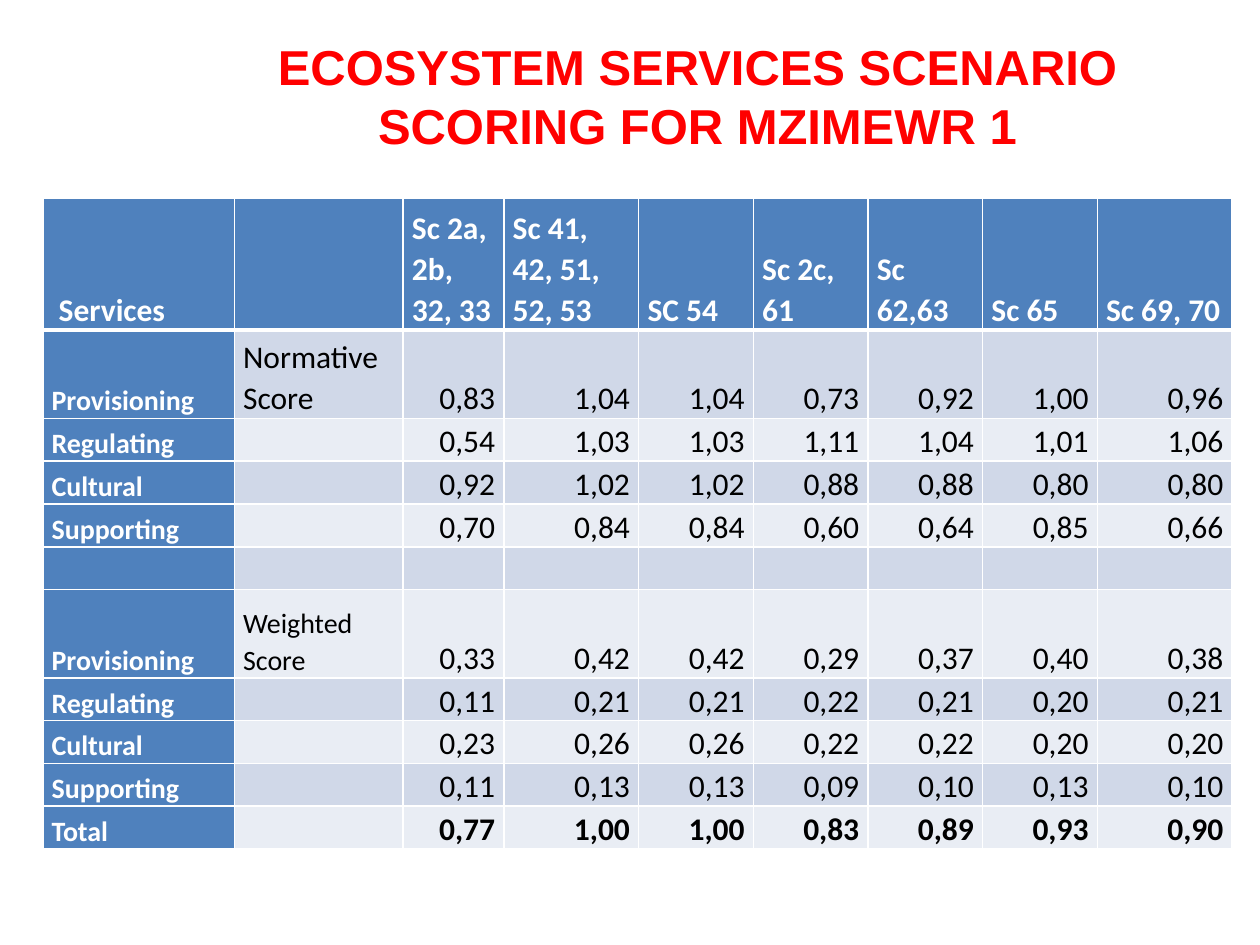
from typing import NamedTuple

from lxml.etree import SubElement as Sub
from pptx import Presentation
from pptx.dml.color import RGBColor as Rgb
from pptx.enum.text import MSO_ANCHOR as Anchor, PP_ALIGN as Align
from pptx.oxml.ns import qn
from pptx.util import Inches, Pt

HUES = {
    "title": "FF0000", "head": "4F81BD", "odd": "D0D8E8",
    "even": "E9EDF4", "light": "FFFFFF", "dark": "000000",
}


class Row(NamedTuple):
    name: str
    note: str = ""
    vals: str = ""
    high: float = 0.34
    note_size: int = 18
    bold: bool = False


HEADS = ["\u00a0Services".replace("\u00a0", " "), "", "Sc 2a, 2b, 32, 33", "Sc 41, 42, 51, 52, 53",
         "SC 54", "Sc 2c, 61", "Sc 62,63", "Sc 65", "Sc 69, 70"]
WIDTHS = [1.52, 1.34, 0.8, 1.07, 0.91, 0.91, 0.91, 0.91, 1.07]
HEAD_HIGH = 1.05
ROWS = [
    Row("Provisioning", "Normative Score", "0,83 1,04 1,04 0,73 0,92 1,00 0,96", 0.7),
    Row("Regulating", vals="0,54 1,03 1,03 1,11 1,04 1,01 1,06"),
    Row("Cultural", vals="0,92 1,02 1,02 0,88 0,88 0,80 0,80"),
    Row("Supporting", vals="0,70 0,84 0,84 0,60 0,64 0,85 0,66"),
    Row(""),
    Row("Provisioning", "Weighted Score", "0,33 0,42 0,42 0,29 0,37 0,40 0,38", 0.7, 16),
    Row("Regulating", vals="0,11 0,21 0,21 0,22 0,21 0,20 0,21"),
    Row("Cultural", vals="0,23 0,26 0,26 0,22 0,22 0,20 0,20"),
    Row("Supporting", vals="0,11 0,13 0,13 0,09 0,10 0,13 0,10"),
    Row("Total", vals="0,77 1,00 1,00 0,83 0,89 0,93 0,90", bold=True),
]


def put(item, vals: dict) -> None:
    for key, val in vals.items():
        setattr(item, key, val)


def write(par, text: str, hue: str, look: dict) -> None:
    run = par.add_run()
    run.text = text
    put(run.font, look)
    run.font.color.rgb = Rgb.from_string(HUES[hue])


def edge(cell, side: str, wide: float) -> None:
    line = Sub(cell._tc.get_or_add_tcPr(), qn(f"a:ln{side}"), w=str(Pt(wide)))
    fill = Sub(line, qn("a:solidFill"))
    Sub(fill, qn("a:srgbClr"), val=HUES["light"])


def draw_cell(cell, row: int, text: str, back: str, hue: str, size: int,
              bold: bool, align: Align) -> None:
    for side in "LRTB":
        thick = (row, side) in ((0, "B"), (1, "T"))
        edge(cell, side, 3 if thick else 1)
    cell.fill.solid()
    cell.fill.fore_color.rgb = Rgb.from_string(HUES[back])
    put(cell, {"margin_left": Inches(0.07), "margin_right": Inches(0.07),
               "margin_top": 0, "margin_bottom": 0, "vertical_anchor": Anchor.BOTTOM})
    par = cell.text_frame.paragraphs[0]
    put(par, {"alignment": align, "line_spacing": 1.07})
    if text:
        write(par, text, hue, {"name": "Calibri", "size": Pt(size), "bold": bold})


def draw_table(slide) -> None:
    highs = [HEAD_HIGH] + [row.high for row in ROWS]
    grid = slide.shapes.add_table(
        len(highs), len(WIDTHS), Inches(0.34), Inches(1.57),
        Inches(sum(WIDTHS)), Inches(sum(highs))).table
    grid.first_col = True
    for col, wide in zip(grid.columns, WIDTHS):
        col.width = Inches(wide)
    for line, high in zip(grid.rows, highs):
        line.height = Inches(high)
    for c, head in enumerate(HEADS):
        draw_cell(grid.cell(0, c), 0, head, "head", "light", 18, True, Align.LEFT)
    for r, row in enumerate(ROWS, 1):
        band = "odd" if r % 2 else "even"
        vals = row.vals.split() or [""] * (len(WIDTHS) - 2)
        draw_cell(grid.cell(r, 0), r, row.name, "head", "light", 16, True, Align.LEFT)
        draw_cell(grid.cell(r, 1), r, row.note, band, "dark", row.note_size, False, Align.LEFT)
        for c, val in enumerate(vals, 2):
            draw_cell(grid.cell(r, c), r, val, band, "dark", 18, row.bold, Align.RIGHT)


def draw_title(slide) -> None:
    title = slide.shapes.title
    put(title, {"left": Inches(1.6), "top": Inches(0.24),
                "width": Inches(7.87), "height": Inches(1.04)})
    put(title.text_frame, {"word_wrap": True, "vertical_anchor": Anchor.MIDDLE})
    par = title.text_frame.paragraphs[0]
    par.alignment = Align.CENTER
    write(par, "ECOSYSTEM SERVICES SCENARIO SCORING FOR MZIMEWR 1", "title",
          {"name": "Arial", "size": Pt(28), "bold": True})


def main() -> None:
    deck = Presentation()
    put(deck, {"slide_width": Inches(10), "slide_height": Inches(7.5)})
    slide = deck.slides.add_slide(deck.slide_layouts[5])
    draw_title(slide)
    draw_table(slide)
    deck.save("out.pptx")


if __name__ == "__main__":
    main()
